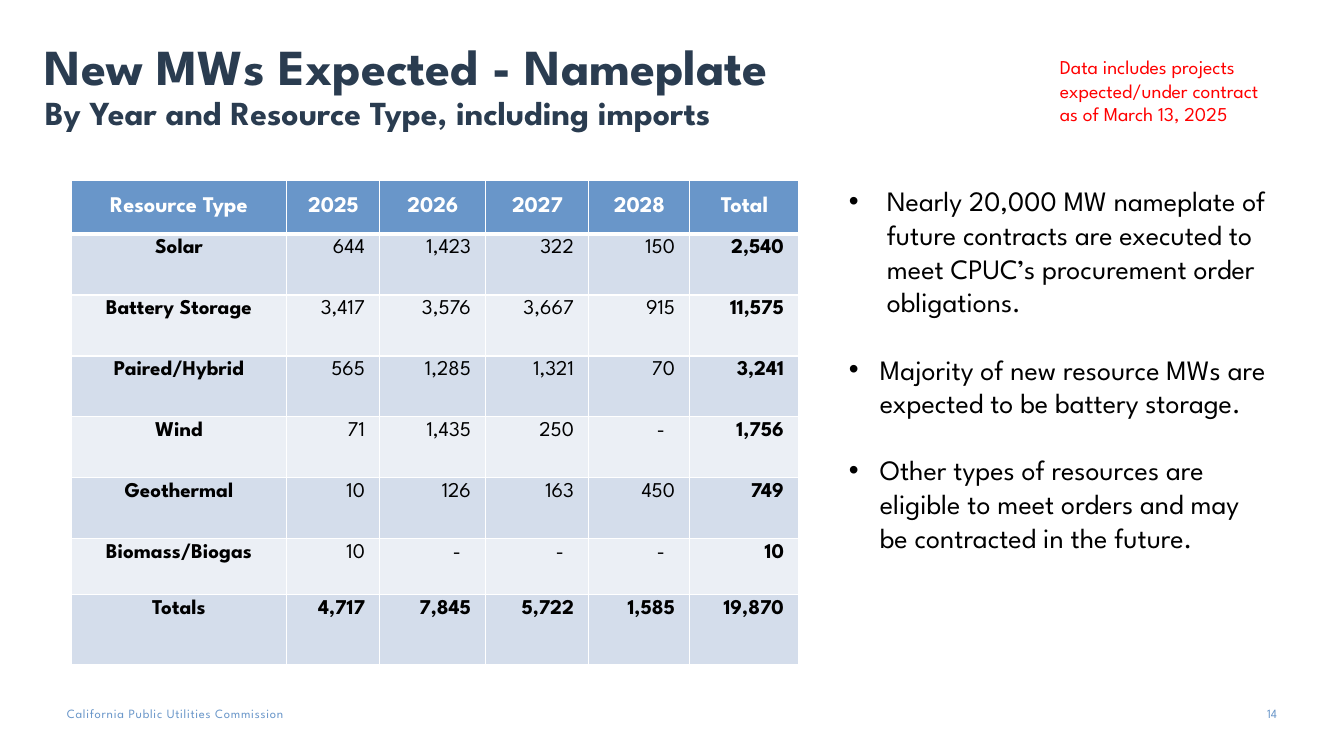
import pptx
import pptx.dml.color
import pptx.enum.text
import pptx.oxml
import pptx.oxml.ns
import pptx.util

EMU_PER_PX = 914400 / 100.8
FONT = "League Spartan"
COLORS = {
    "navy": "2A3C50",
    "blue": "6996C9",
    "red": "FF0000",
    "black": "000000",
    "white": "FFFFFF",
    "band_dark": "D4DDEB",
    "band_light": "EBEFF5",
}
ALIGN = pptx.enum.text.PP_ALIGN
ANCHOR = pptx.enum.text.MSO_ANCHOR

COLUMN_WIDTHS = [216, 93, 106, 103, 101, 109]
ROW_HEIGHTS = [54, 61, 61, 61, 61, 61, 56, 70]
CAPACITY_ROWS = [
    ["Resource Type", "2025", "2026", "2027", "2028", "Total"],
    ["Solar", "644", "1,423", "322", "150", "2,540"],
    ["Battery Storage", "3,417", "3,576", "3,667", "915", "11,575"],
    ["Paired/Hybrid", "565", "1,285", "1,321", "70", "3,241"],
    ["Wind", "71", "1,435", "250", "-", "1,756"],
    ["Geothermal", "10", "126", "163", "450", "749"],
    ["Biomass/Biogas", "10", "-", "-", "-", "10"],
    ["Totals", "4,717", "7,845", "5,722", "1,585", "19,870"],
]
# Each bullet has its text and its hanging indent.
BULLETS = [
    ("Nearly 20,000 MW nameplate of future contracts are executed to meet "
     "CPUC’s procurement order obligations.", 38),
    ("Majority of new resource MWs are expected to be battery storage.", 31),
    ("Other types of resources are eligible to meet orders and may be "
     "contracted in the future.", 31),
]


def px(length):
    return pptx.util.Emu(round(length * EMU_PER_PX))


def rgb(color):
    return pptx.dml.color.RGBColor.from_string(COLORS[color])


def format_run(run, size, color, bold=False):
    run.font.name = FONT
    run.font.size = pptx.util.Pt(size)
    run.font.bold = bold
    run.font.color.rgb = rgb(color)


def add_text(slide, box, text, size, color, bold=False, margins=None):
    """Add a wrapping text box; margins are left, top, right, bottom in px."""
    shape = slide.shapes.add_textbox(*map(px, box))
    frame = shape.text_frame
    frame.word_wrap = True
    if margins:
        (frame.margin_left, frame.margin_top,
         frame.margin_right, frame.margin_bottom) = map(px, margins)
    frame.text = text
    for paragraph in frame.paragraphs:
        for run in paragraph.runs:
            format_run(run, size, color, bold)
    return frame


def add_title(slide):
    frame = add_text(
        slide, (45, -8, 1210, 146),
        "New MWs Expected - Nameplate\vBy Year and Resource Type, including imports",
        36, "navy", bold=True, margins=(0, 5, 10, 5))
    frame.vertical_anchor = ANCHOR.BOTTOM
    paragraph = frame.paragraphs[0]
    paragraph.line_spacing = 0.9
    paragraph.runs[1].font.size = pptx.util.Pt(24)


def add_footer(slide):
    no_margins = (0, 0, 0, 0)
    agency = add_text(slide, (67, 706, 324, 15),
                      "California Public Utilities Commission",
                      9, "blue", margins=no_margins)
    agency.paragraphs[0].runs[0].font._element.set("spc", "50")
    number = add_text(slide, (1235, 706, 42, 20), "14", 9, "blue",
                      margins=no_margins)
    number.paragraphs[0].alignment = ALIGN.RIGHT


def set_borders(cell, top, bottom):
    """Draw white cell borders, with the top and bottom widths in points."""
    properties = cell._tc.get_or_add_tcPr()
    widths = {"lnL": 0.86, "lnR": 0.86, "lnT": top, "lnB": bottom}
    for position, (side, width) in enumerate(widths.items()):
        border = pptx.oxml.parse_xml(
            f'<a:{side} {pptx.oxml.ns.nsdecls("a")} w="{pptx.util.Pt(width)}">'
            f'<a:solidFill><a:srgbClr val="{COLORS["white"]}"/></a:solidFill>'
            f'</a:{side}>')
        properties.insert(position, border)


def fill_cell(cell, text, row, column):
    is_header = row == 0
    is_label = column == 0
    last_row, last_column = len(ROW_HEIGHTS) - 1, len(COLUMN_WIDTHS) - 1
    bold = is_label or row in (0, last_row) or column == last_column

    cell.text = text
    paragraph = cell.text_frame.paragraphs[0]
    cell.fill.solid()
    if is_header:
        cell.vertical_anchor = ANCHOR.MIDDLE
        cell.fill.fore_color.rgb = rgb("blue")
        format_run(paragraph.runs[0], 16, "white", bold)
    else:
        cell.fill.fore_color.rgb = rgb("band_dark" if row % 2 else "band_light")
        format_run(paragraph.runs[0], 15, "black", bold)

    if is_header or is_label:
        paragraph.alignment = ALIGN.CENTER
    else:
        paragraph.alignment = ALIGN.RIGHT
        cell.margin_right = px(25 if text == "-" else 15)
    set_borders(cell, top=2.58 if row == 1 else 0.86,
                bottom=2.58 if is_header else 0.86)


def add_capacity_table(slide):
    shape = slide.shapes.add_table(
        len(ROW_HEIGHTS), len(COLUMN_WIDTHS), px(71), px(180),
        px(sum(COLUMN_WIDTHS)), px(sum(ROW_HEIGHTS)))
    table = shape.table
    for column, width in zip(table.columns, COLUMN_WIDTHS):
        column.width = px(width)
    for row, height in zip(table.rows, ROW_HEIGHTS):
        row.height = px(height)
    for row, texts in enumerate(CAPACITY_ROWS):
        for column, text in enumerate(texts):
            fill_cell(table.cell(row, column), text, row, column)


def add_bullets(slide):
    frame = add_text(slide, (839, 179, 438, 575),
                     "\n".join(text for text, indent in BULLETS), 20, "black")
    for paragraph, (text, indent) in zip(frame.paragraphs, BULLETS):
        paragraph.space_after = pptx.util.Pt(24)
        properties = paragraph._p.get_or_add_pPr()
        properties.set("marL", str(px(indent)))
        properties.set("indent", str(px(-indent)))
        for tag, name, value in (("buFont", "typeface", "Arial"),
                                 ("buChar", "char", "•")):
            properties.append(pptx.oxml.parse_xml(
                f'<a:{tag} {pptx.oxml.ns.nsdecls("a")} {name}="{value}"/>'))


def main():
    presentation = pptx.Presentation()
    presentation.slide_width = px(1344)
    presentation.slide_height = px(756)
    slide = presentation.slides.add_slide(presentation.slide_layouts[6])

    add_footer(slide)
    add_text(slide, (1050, 50, 284, 82),
             "Data includes projects\vexpected/under contract\nas of March 13, 2025",
             14, "red")
    add_title(slide)
    add_capacity_table(slide)
    add_bullets(slide)

    presentation.save("out.pptx")


if __name__ == "__main__":
    main()
